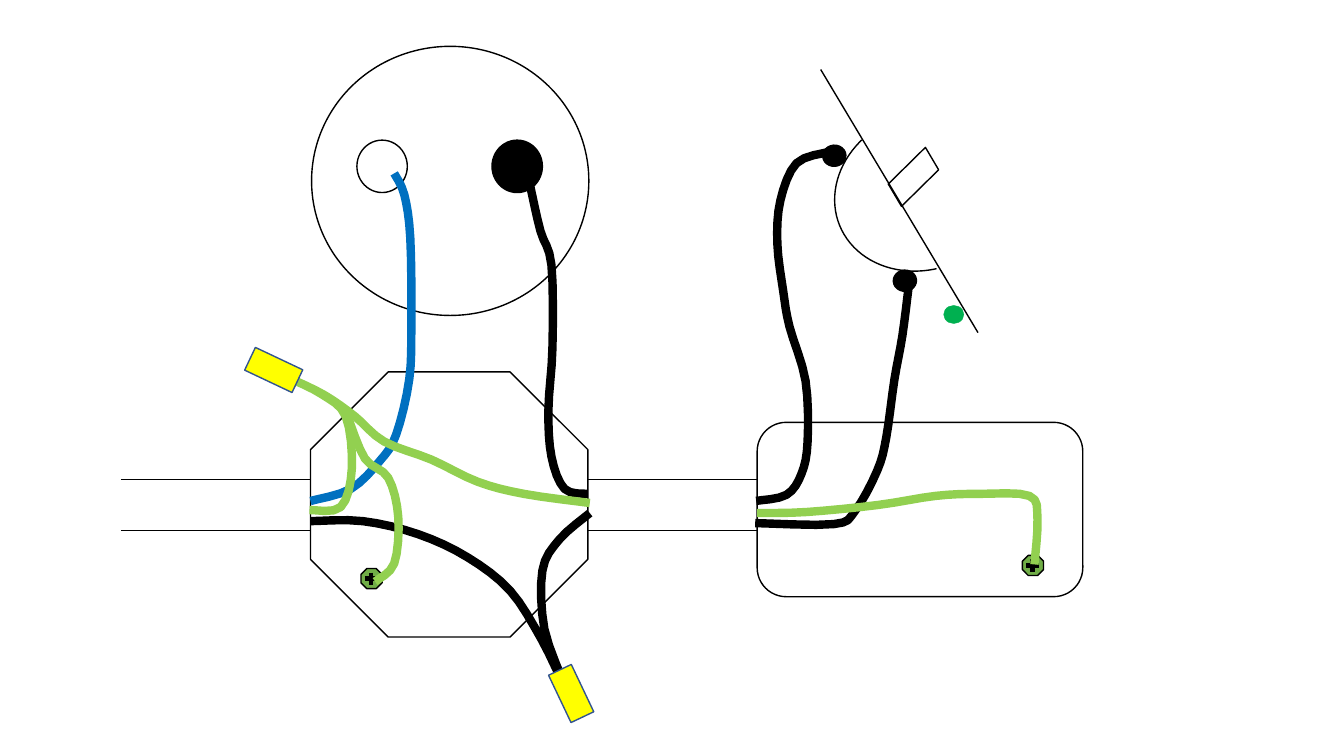
"""Wiring sketch: lamp, octagon box, switch box and toggle switch."""
import dataclasses
import lxml.etree
import pptx
import pptx.dml.color
import pptx.enum.shapes
import pptx.oxml.ns
import pptx.util

KIND = pptx.enum.shapes.MSO_SHAPE


@dataclasses.dataclass(frozen=True)
class Theme:
    black: str = "000000"
    white: str = "FFFFFF"
    blue: str = "0070C0"
    green: str = "92D050"
    lamp: str = "00B050"
    screw: str = "70AD47"
    nut: str = "FFFF00"
    rim: str = "325491"
    hair: float = 0.25
    thin: float = 0.5
    edge: float = 1
    cross: float = 3
    wire: float = 6


look = Theme()

LAMP = [
    (KIND.OVAL, (3.09, 0.46, 2.75, 2.67), None),
    (KIND.OVAL, (3.54, 1.39, 0.5, 0.52), None),
    (KIND.OVAL, (4.88, 1.39, 0.5, 0.52), look.black),
]
BOXES = [
    (KIND.OCTAGON, (3.08, 3.69, 2.75, 2.63), look.white),
    (KIND.ROUNDED_RECTANGLE, (7.51, 4.19, 3.23, 1.73), None),
]
DUCTS = [(1.2, 3.08), (5.83, 7.51)]
LEVELS = [4.76, 5.26]
SCREWS = [(3.68, 5.74), (10.24, 5.61)]
ARC = (8.26, 1.12, 1.81, 1.55)
LEVER = (8.14, 0.69, 9.7, 3.3)
TOGGLE = (8.77, 1.63, 0.58, 0.25)
POSTS = [(8.86, 2.68, 0.23, 0.21), (8.16, 1.44, 0.23, 0.21)]
LIGHT = (9.36, 3.03, 0.2, 0.18)
NUTS = [((5.54, 6.62, 0.25, 0.52), 334.6), ((2.59, 3.41, 0.25, 0.52), 295.3)]

STEPS = 4
WIRES = [
    (look.black, [
        (3.08, 5.17), (3.6, 5.17), (4.15, 5.3), (4.64, 5.53), (5.06, 5.86),
        (5.37, 6.34), (5.59, 6.78), (5.4, 6.24), (5.38, 5.66), (5.55, 5.35),
        (5.85, 5.09)]),
    (look.black, [
        (7.49, 5.19), (8.27, 5.2), (8.48, 5.07), (8.7, 4.67), (8.79, 4.34),
        (8.87, 3.77), (8.95, 3.33), (9.01, 2.86)]),
    (look.black, [
        (7.5, 4.97), (7.8, 4.91), (7.95, 4.7), (8.01, 4.38), (7.99, 3.78),
        (7.83, 3.24), (7.77, 2.9), (7.71, 2.42), (7.74, 1.99), (7.9, 1.62),
        (8.21, 1.51)]),
    (look.black, [
        (5.83, 4.9), (5.6, 4.85), (5.47, 4.53), (5.44, 4.06), (5.48, 3.45),
        (5.47, 2.63), (5.36, 2.29), (5.26, 1.85)]),
    (look.blue, [
        (3.08, 4.97), (3.48, 4.85), (3.77, 4.57), (3.93, 4.31), (4.06, 3.76),
        (4.08, 3.2), (4.07, 2.36), (4.01, 1.93), (3.91, 1.72)]),
    (look.green, [
        (7.51, 5.09), (8, 5.08), (8.71, 5.01), (9.28, 4.92), (9.71, 4.9),
        (10.21, 4.92), (10.29, 5.15), (10.26, 5.6)]),
    (look.green, [
        (3.07, 5.06), (3.38, 5.03), (3.49, 4.65), (3.43, 4.13), (3.19, 3.91),
        (2.91, 3.77), (3.22, 3.92), (3.52, 4.13), (3.81, 4.38), (4.28, 4.56),
        (4.74, 4.78), (5.2, 4.9), (5.85, 4.99)]),
    (look.green, [
        (3.45, 4.14), (3.62, 4.55), (3.85, 4.74), (3.95, 5.13), (3.91, 5.59),
        (3.72, 5.77)]),
]


def span(inch):
    return pptx.util.Cm(inch * 2.54)


def ink(line, tone, width):
    line.color.rgb = pptx.dml.color.RGBColor.from_string(tone)
    line.width = pptx.util.Pt(width)


def style(shape, fill, tone, width):
    shape.shadow.inherit = False
    if fill:
        shape.fill.solid()
        shape.fill.fore_color.rgb = pptx.dml.color.RGBColor.from_string(fill)
    else:
        shape.fill.background()
    ink(shape.line, tone, width)


def part(kind, place, fill=None, turn=0, tone=look.black, width=look.edge):
    shape = slide.shapes.add_shape(kind, *map(span, place))
    shape.rotation = turn
    style(shape, fill, tone, width)
    return shape


def rule(ends, width):
    line = slide.shapes.add_connector(
        pptx.enum.shapes.MSO_CONNECTOR.STRAIGHT, *map(span, ends))
    ink(line.line, look.black, width)
    lxml.etree.SubElement(line._element.spPr, pptx.oxml.ns.qn("a:effectLst"))


def blend(a, b, c, d, t):
    bend = (2 * a - 5 * b + 4 * c - d) * t + (3 * b - a - 3 * c + d) * t * t
    return b + (c - a + bend) * t / 2


def smooth(knots):
    ring = [knots[0], *knots, knots[-1]]
    for four in zip(ring, ring[1:], ring[2:], ring[3:]):
        for step in range(STEPS):
            yield tuple(blend(*axis, step / STEPS) for axis in zip(*four))
    yield knots[-1]


def wire(tone, knots):
    (left, top), *rest = [(span(x), span(y)) for x, y in smooth(knots)]
    pen = slide.shapes.build_freeform(left, top)
    pen.add_line_segments(rest, close=False)
    style(pen.convert_to_shape(), None, tone, look.wire)


deck = pptx.Presentation()
deck.slide_width, deck.slide_height = span(13.33), span(7.5)
slide = deck.slides.add_slide(deck.slide_layouts[6])

for kind, place, fill in LAMP + BOXES:
    part(kind, place, fill)
for start, end in DUCTS:
    for level in LEVELS:
        rule((start, level, end, level), look.thin)
for x, y in SCREWS:
    part(KIND.OCTAGON, (x - 0.1, y - 0.1, 0.21, 0.2), look.screw)
    rule((x, y - 0.06, x, y + 0.06), look.cross)
    rule((x - 0.06, y, x + 0.06, y), look.cross)

arc = part(KIND.ARC, ARC, turn=157.7)
arc.adjustments[0], arc.adjustments[1] = 169.91, 37.02
rule(LEVER, look.edge)
part(KIND.PARALLELOGRAM, TOGGLE, turn=315.4)
for post in POSTS:
    part(KIND.OVAL, post, look.black, 356)
part(KIND.OVAL, LIGHT, look.lamp, tone=look.lamp, width=look.hair)

for tone, knots in WIRES:
    wire(tone, knots)
for place, turn in NUTS:
    part(KIND.RECTANGLE, place, look.nut, turn, look.rim)

deck.save("out.pptx")
